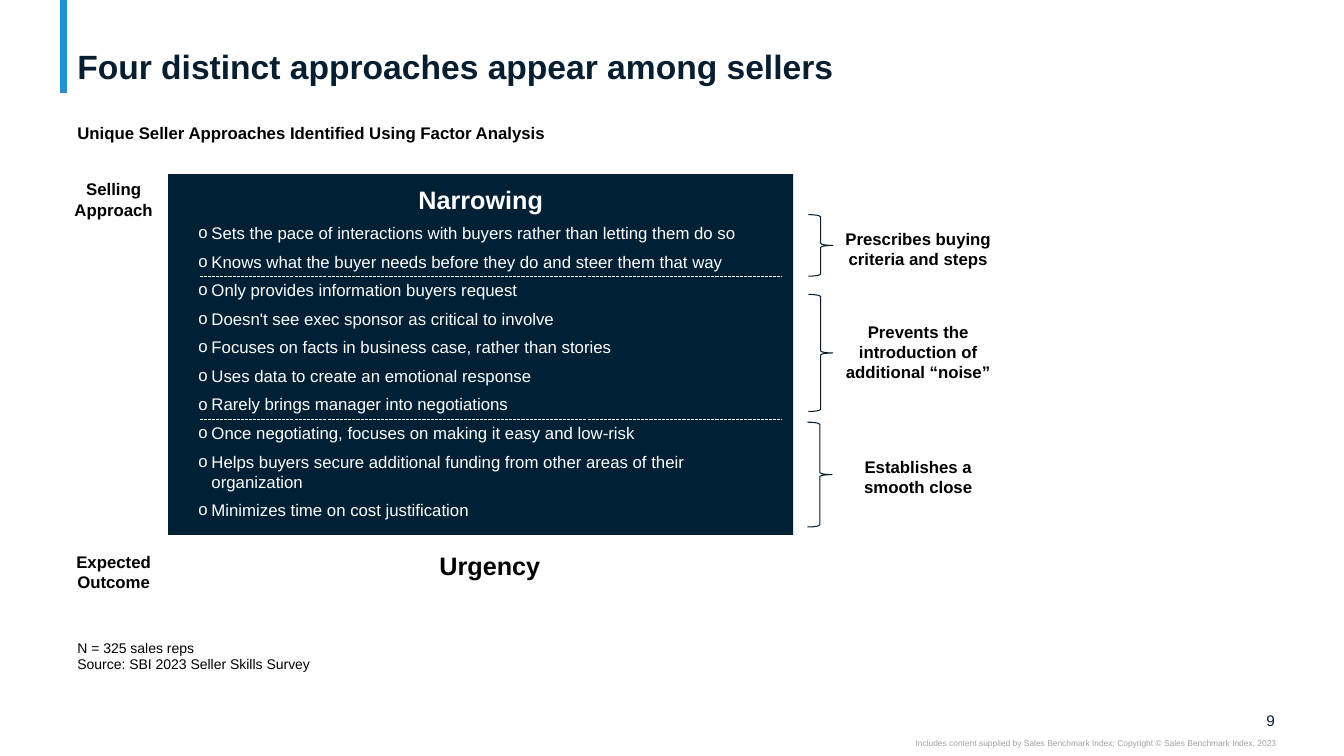
from lxml import etree
from pptx import Presentation
from pptx import util as u
from pptx.dml.color import RGBColor
from pptx.enum import dml, shapes, text
from pptx.oxml import ns

COLOURS = {
    "accent": "2391CF",
    "title": "071E31",
    "body": "000000",
    "panel": "002036",
    "brace": "061D31",
    "light": "FFFFFF",
    "footer": "A0A0A0",
}
FONT = "Arial"
LEFT, CENTER, RIGHT = text.PP_ALIGN.LEFT, text.PP_ALIGN.CENTER, text.PP_ALIGN.RIGHT
MARGIN = 1.7
PANEL_LEFT, PANEL_TOP = 4.24, 4.39

APPROACHES = [
    "Sets the pace of interactions with buyers rather than letting them do so",
    "Knows what the buyer needs before they do and steer them that way",
    "Only provides information buyers request",
    "Doesn't see exec sponsor as critical to involve",
    "Focuses on facts in business case, rather than stories",
    "Uses data to create an emotional response",
    "Rarely brings manager into negotiations",
    "Once negotiating, focuses on making it easy and low-risk",
    "Helps buyers secure additional funding from other areas of their organization",
    "Minimizes time on cost justification",
]
# Brace left, top and height, then label top, height and wording
EFFECTS = [
    (20.37, 5.41, 1.55, 5.64, 1.27, "Prescribes buying criteria and steps"),
    (20.37, 7.42, 2.95, 7.98, 1.8, "Prevents the introduction of additional “noise”"),
    (20.35, 10.64, 2.64, 11.38, 1.27, "Establishes a smooth close"),
]


def colour(name):
    return RGBColor.from_string(COLOURS[name])


def set_insets(frame, left, top, right, bottom):
    frame.margin_left, frame.margin_top = u.Cm(left), u.Cm(top)
    frame.margin_right, frame.margin_bottom = u.Cm(right), u.Cm(bottom)


def style(paragraph, size, colour_name, bold=False, align=LEFT):
    paragraph.alignment = align
    font = paragraph.font
    font.name, font.size, font.bold = FONT, u.Pt(size), bold
    font.color.rgb = colour(colour_name)


def add_text(slide, box, lines, size, colour_name="body", bold=False, align=LEFT):
    """Add a wrapping text box, one paragraph per line, and return its frame."""
    frame = slide.shapes.add_textbox(*map(u.Cm, box)).text_frame
    frame.word_wrap = True
    frame.text = "\n".join(lines)
    for paragraph in frame.paragraphs:
        style(paragraph, size, colour_name, bold, align)
    return frame


def add_label(slide, box, wording, size=12):
    add_text(slide, box, [wording], size, bold=True, align=CENTER)


def add_line(slide, start, end, colour_name, width, dash=None):
    line = slide.shapes.add_connector(
        shapes.MSO_CONNECTOR.STRAIGHT, *map(u.Cm, start + end))
    line.line.color.rgb = colour(colour_name)
    line.line.width = u.Pt(width)
    if dash:
        line.line.dash_style = dash
    etree.SubElement(line._element.spPr, ns.qn("a:effectLst"))


def add_bullet(paragraph):
    properties = paragraph._p.get_or_add_pPr()
    indent = u.Cm(0.33)
    properties.set("marL", str(indent))
    properties.set("indent", str(-indent))
    etree.SubElement(properties, ns.qn("a:buFont"), typeface=FONT)
    etree.SubElement(properties, ns.qn("a:buChar"), char="o")


def add_panel(slide, heading, items):
    panel = slide.shapes.add_shape(
        shapes.MSO_SHAPE.RECTANGLE,
        *map(u.Cm, (PANEL_LEFT, PANEL_TOP, 15.75, 9.09)))
    panel.shadow.inherit = False
    panel.fill.solid()
    panel.fill.fore_color.rgb = colour("panel")
    panel.line.fill.background()
    frame = panel.text_frame
    frame.word_wrap = True
    frame.vertical_anchor = text.MSO_ANCHOR.TOP
    set_insets(frame, 0.76, 0.25, 0.76, 0.13)
    frame.text = heading
    style(frame.paragraphs[0], 18, "light", True, CENTER)
    for item in items:
        paragraph = frame.add_paragraph()
        paragraph.text = item
        paragraph.space_before = u.Pt(6)
        add_bullet(paragraph)
        style(paragraph, 12, "light")


def add_brace(slide, left, top, height):
    brace = slide.shapes.add_shape(
        shapes.MSO_SHAPE.RIGHT_BRACE, *map(u.Cm, (left, top, 0.62, height)))
    brace.shadow.inherit = False
    brace.fill.background()
    brace.line.color.rgb = colour("brace")
    brace.line.width = u.Pt(0.75)


def add_header(slide):
    add_line(slide, (1.6, 0), (1.6, 2.34), "accent", 5)
    title = add_text(slide, (MARGIN, 0.05, 30.45, 2.13),
                     ["Four distinct approaches appear among sellers"],
                     24, "title", True)
    title.vertical_anchor = text.MSO_ANCHOR.BOTTOM
    title.paragraphs[0].line_spacing = 0.9
    set_insets(title, 0.25, 0, 0.25, 0)
    add_text(slide, (MARGIN, 2.97, 19.3, 0.76),
             ["Unique Seller Approaches Identified Using Factor Analysis"],
             12, bold=True)


def add_footer(slide):
    add_text(slide, (MARGIN, 15.98, 12.32, 1.12),
             ["N = 325 sales reps", "Source: SBI 2023 Seller Skills Survey"], 10)
    number = add_text(slide, (31.29, 17.91, 0.84, 0.48), ["9"],
                      11, "title", align=RIGHT)
    number.vertical_anchor = text.MSO_ANCHOR.MIDDLE
    credit = add_text(slide, (19.05, 18.59, 13.11, 0.25),
                      ["Includes content supplied by Sales Benchmark Index; "
                       "Copyright © Sales Benchmark Index, 2023"],
                      6, "footer", align=RIGHT)
    for frame in (number, credit):
        set_insets(frame, 0, 0, 0, 0)


def main():
    presentation = Presentation()
    presentation.slide_width = u.Cm(33.87)
    presentation.slide_height = u.Cm(19.05)
    slide = presentation.slides.add_slide(presentation.slide_layouts[6])

    add_header(slide)
    for top, wording in ((PANEL_TOP, "Selling Approach"), (13.77, "Expected Outcome")):
        add_label(slide, (1.19, top, 3.35, 1.27), wording)
    add_panel(slide, "Narrowing", APPROACHES)
    add_label(slide, (8.79, 13.74, 7.11, 1.02), "Urgency", 18)
    for left, top, height, label_top, label_height, wording in EFFECTS:
        add_brace(slide, left, top, height)
        add_label(slide, (20.98, label_top, 4.32, label_height), wording)
    for y in (6.96, 10.57):
        add_line(slide, (5.03, y), (19.71, y), "light", 0.75,
                 dml.MSO_LINE.SQUARE_DOT)
    add_footer(slide)
    presentation.save("out.pptx")


if __name__ == "__main__":
    main()
